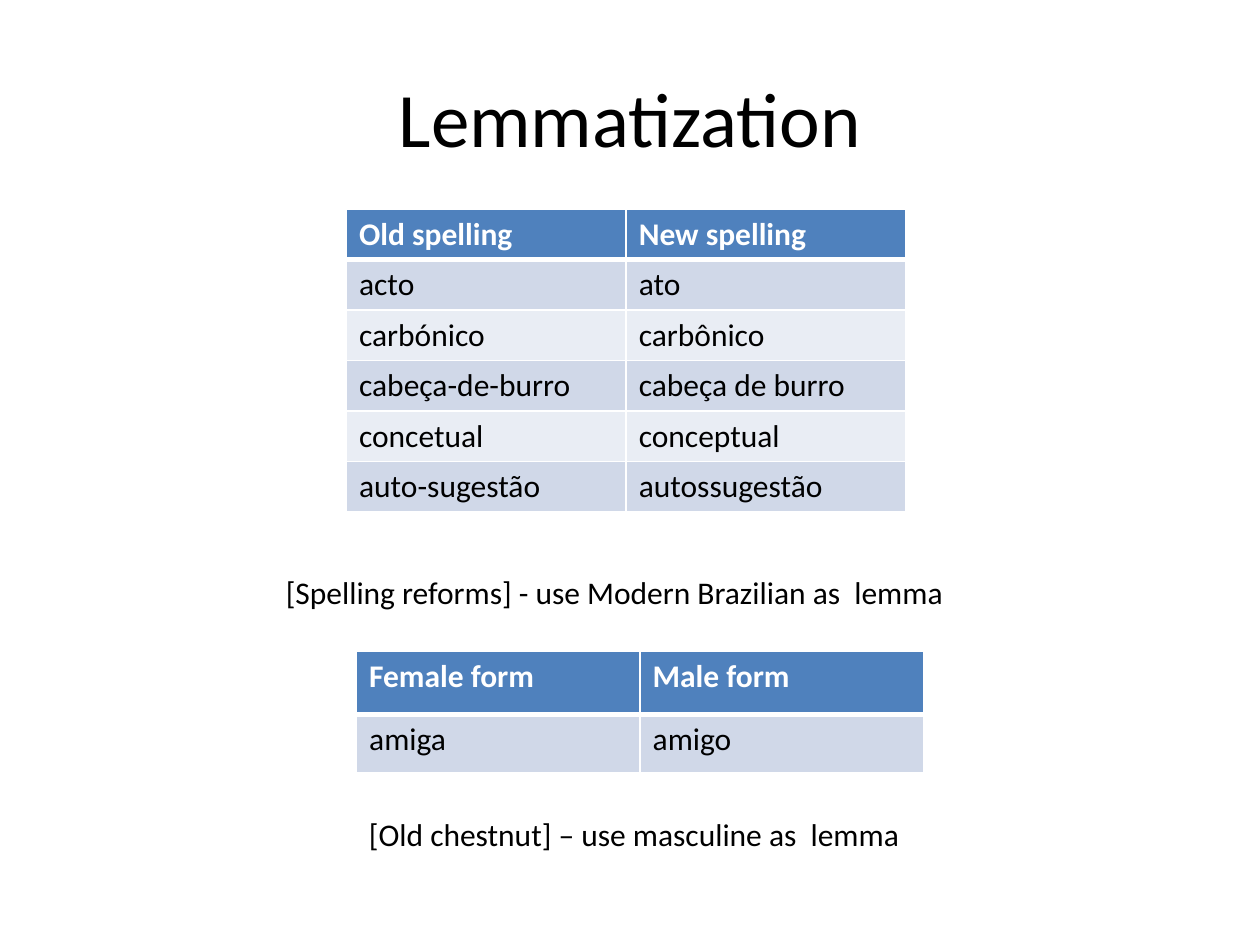
from lxml.etree import SubElement
from pptx import Presentation
from pptx.dml.color import RGBColor
from pptx.enum.text import MSO_ANCHOR, PP_ALIGN
from pptx.oxml.ns import qn
from pptx.util import Inches, Pt

COLORS = {
    "text": "000000",
    "header": "4F81BD",
    "header_text": "FFFFFF",
    "border": "FFFFFF",
    "odd_row": "D0D8E8",
    "even_row": "E9EDF4",
}
BODY = {"name": "Calibri", "size": Pt(18), "bold": False}
HEADING = {**BODY, "bold": True}
TITLE = {**BODY, "size": Pt(44)}

SPELLINGS = [
    ("Old spelling", "New spelling"),
    ("acto", "ato"),
    ("carbónico", "carbônico"),
    ("cabeça-de-burro", "cabeça de burro"),
    ("concetual", "conceptual"),
    ("auto-sugestão", "autossugestão"),
]
GENDERS = [("Female form", "Male form"), ("amiga", "amigo")]


def color(name):
    return RGBColor.from_string(COLORS[name])


def write(frame, words, font_format, color_name="text"):
    run = frame.paragraphs[0].add_run()
    run.text = words
    for key, value in font_format.items():
        setattr(run.font, key, value)
    run.font.color.rgb = color(color_name)


def add_text(slide, words, left, top, width, height, font_format=BODY):
    frame = slide.shapes.add_textbox(
        Inches(left), Inches(top), Inches(width), Inches(height)
    ).text_frame
    frame.word_wrap = True
    write(frame, words, font_format)
    return frame


def add_title(slide, words):
    frame = add_text(slide, words, 0.5, 0.3, 9, 1.25, TITLE)
    frame.vertical_anchor = MSO_ANCHOR.MIDDLE
    frame.paragraphs[0].alignment = PP_ALIGN.CENTER


def set_borders(cell, top, bottom):
    """Draw the four cell borders; widths are in points."""
    properties = cell._tc.get_or_add_tcPr()
    for side, width in {"L": 1, "R": 1, "T": top, "B": bottom}.items():
        line = SubElement(properties, qn(f"a:ln{side}"), w=str(Pt(width)))
        fill = SubElement(line, qn("a:solidFill"))
        SubElement(fill, qn("a:srgbClr"), val=COLORS["border"])


def style_cell(cell, row_index):
    # Borders precede the fill in the cell properties.
    set_borders(
        cell,
        top=3 if row_index == 1 else 1,
        bottom=3 if row_index == 0 else 1,
    )
    band = "odd_row" if row_index % 2 else "even_row"
    cell.fill.solid()
    cell.fill.fore_color.rgb = color("header" if row_index == 0 else band)


def add_word_table(slide, entries, left, top, column_width, row_heights):
    table = slide.shapes.add_table(
        len(entries), len(entries[0]), Inches(left), Inches(top),
        Inches(column_width * len(entries[0])), Inches(sum(row_heights)),
    ).table
    for column in table.columns:
        column.width = Inches(column_width)
    for row_index, (words, height) in enumerate(zip(entries, row_heights)):
        table.rows[row_index].height = Inches(height)
        for column_index, word in enumerate(words):
            cell = table.cell(row_index, column_index)
            style_cell(cell, row_index)
            if row_index == 0:
                write(cell.text_frame, word, HEADING, "header_text")
            else:
                write(cell.text_frame, word, BODY)


def main():
    presentation = Presentation()
    presentation.slide_width = Inches(10)
    presentation.slide_height = Inches(7.5)
    slide = presentation.slides.add_slide(presentation.slide_layouts[6])

    add_title(slide, "Lemmatization")
    add_word_table(slide, SPELLINGS, 2.75, 1.66, 2.22, [0.4] * len(SPELLINGS))
    add_word_table(slide, GENDERS, 2.83, 5.17, 2.25, [0.5, 0.46])
    add_text(slide, "[Spelling reforms] - use Modern Brazilian as  lemma",
             2.17, 4.5, 7.58, 0.4)
    add_text(slide, "[Old chestnut] – use masculine as  lemma",
             2.83, 6.42, 7.1, 0.4)

    presentation.save("out.pptx")


if __name__ == "__main__":
    main()
